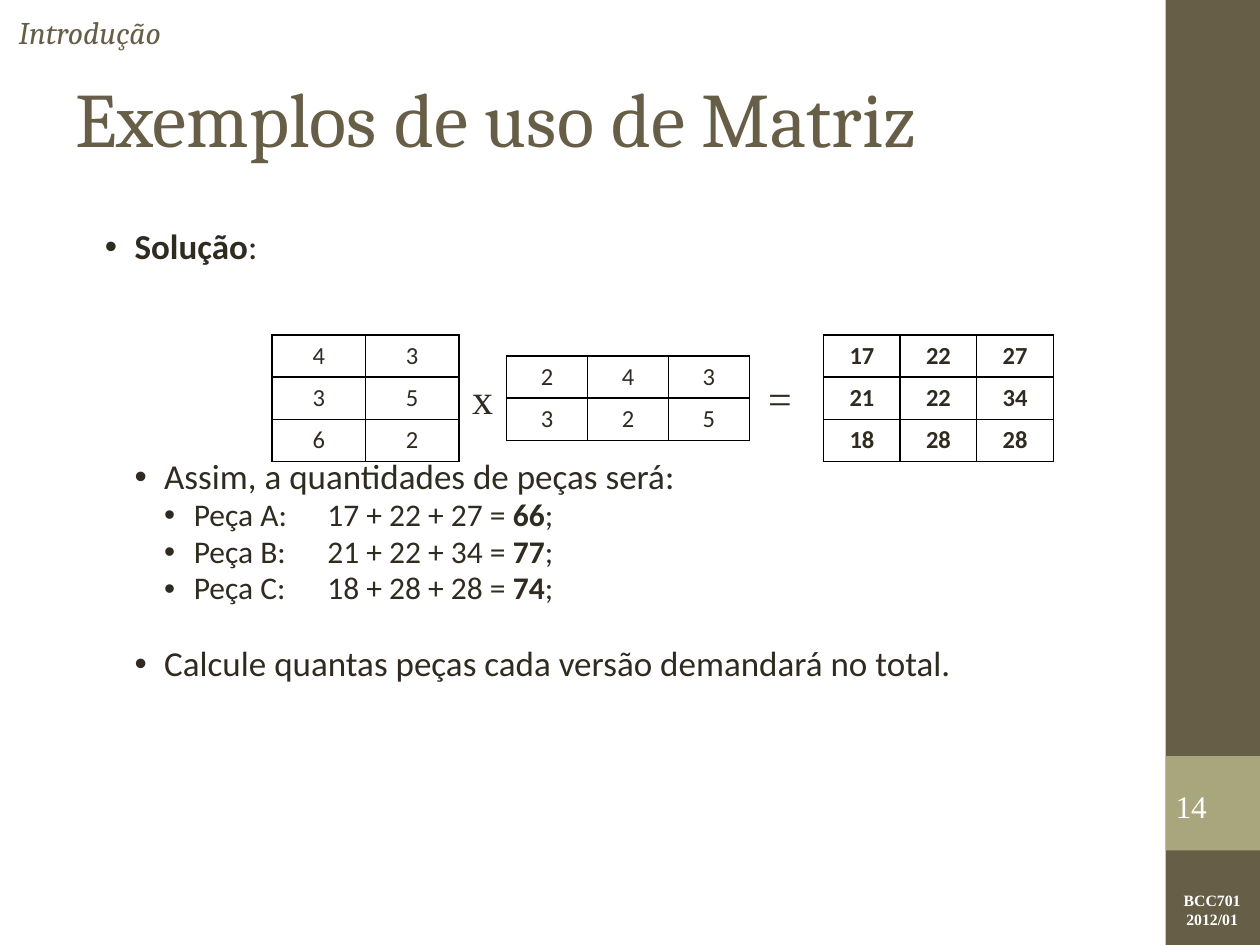
from pptx import Presentation
from pptx.dml.color import RGBColor
from pptx.enum.shapes import MSO_SHAPE as Shape
from pptx.enum.text import MSO_ANCHOR as Anchor, PP_ALIGN as Align
from pptx.oxml.ns import qn
from pptx.util import Inches, Pt
from lxml.etree import SubElement as Sub

COLS, ROWS = 100, 75
BROWN, SAGE, DARK, WHITE = "675E47", "A9A57C", "2F2B20", "FFFFFF"
SERIF, SANS, ROMAN = "Cambria", "Calibri", "Times New Roman"
INSET = (0.1, 0.05, 0.1, 0.05)
STEP = 0.235

deck = Presentation()
deck.slide_width, deck.slide_height = Inches(10), Inches(7.5)
slide = deck.slides.add_slide(deck.slide_layouts[6])


def color(code):
    return RGBColor.from_string(code)


def place(box):
    x, y, w, h = box
    wide, high = deck.slide_width / COLS, deck.slide_height / ROWS
    return [round(v) for v in (x * wide, y * high, w * wide, h * high)]


def style(font, form):
    for key, value in form.items():
        if key == "color":
            font.color.rgb = color(value)
        else:
            setattr(font, key, value)


def look(name, size, code, **more):
    return dict(name=name, size=Pt(size), color=code, **more)


def frame(box, anchor=Anchor.TOP, inset=INSET, wrap=True):
    text = slide.shapes.add_textbox(*place(box)).text_frame
    text.word_wrap, text.vertical_anchor = wrap, anchor
    for side, gap in zip(("left", "top", "right", "bottom"), inset):
        setattr(text, f"margin_{side}", Inches(gap))
    return text


def fill(para, words, form, align=Align.LEFT):
    para.alignment = align
    run = para.add_run()
    run.text = words
    style(run.font, form)


def label(box, words, form, **more):
    fill(frame(box, **more).paragraphs[0], words, form)


def panel(box, code):
    shape = slide.shapes.add_shape(Shape.RECTANGLE, *place(box))
    shape.shadow.inherit = False
    shape.fill.solid()
    shape.fill.fore_color.rgb = color(code)
    shape.line.fill.background()


def side(box):
    x, y, w, h = box
    panel(box, BROWN)
    panel((x, y + h * 0.8, w, h * 0.1), SAGE)
    label((x + 0.8, y + h * 0.824, w * 0.8, 4.3), "14",
          look(ROMAN, 18, WHITE), anchor=Anchor.MIDDLE, inset=(0,) * 4)
    text = frame((x + 0.1, y + h * 0.936, w - 0.3, 4))
    form = look(ROMAN, 9, WHITE, bold=True)
    fill(text.paragraphs[0], "BCC701", form, Align.CENTER)
    fill(text.add_paragraph(), "2012/01", form, Align.CENTER)


def head(box):
    x, y, w, h = box
    label((x - 4.5, y - 2.2, w, 3.4), "Introdução",
          look(SERIF, 18, BROWN, italic=True), anchor=Anchor.MIDDLE)
    label(box, "Exemplos de uso de Matriz", look(SERIF, 44, BROWN),
          anchor=Anchor.MIDDLE)


def bullet(para, level):
    props = para._p.get_or_add_pPr()
    props.set("marL", str(Inches(STEP * (level + 1))))
    props.set("indent", str(-Inches(STEP)))
    Sub(props, qn("a:buFont")).set("typeface", "Arial")
    Sub(props, qn("a:buChar")).set("char", "•")
    tabs = Sub(props, qn("a:tabLst"))
    Sub(tabs, qn("a:tab"), pos=str(Inches(2)), algn="l")


def body(box):
    parts = [("A", "17 + 22 + 27", "66"), ("B", "21 + 22 + 34", "77"),
             ("C", "18 + 28 + 28", "74")]
    items = [(1, 20, 0, ("", "Solução", ":")),
             (2, 20, 108, ("Assim, a quantidades de peças será:",))]
    items += [(3, 18, 0, (f"Peça {name}:\t{terms} = ", total, ";"))
              for name, terms, total in parts]
    items += [(2, 20, 21,
               ("Calcule quantas peças cada versão demandará no total.",))]
    text = frame(box)
    for n, (level, size, gap, runs) in enumerate(items):
        para = text.add_paragraph() if n else text.paragraphs[0]
        bullet(para, level)
        para.line_spacing = 0.97
        if gap:
            para.space_before = Pt(gap)
        for k, words in enumerate(runs):
            if words:
                fill(para, words, look(SANS, size, DARK, bold=k == 1))


def border(cell):
    props = cell._tc.get_or_add_tcPr()
    for n, edge in enumerate(("lnL", "lnR", "lnT", "lnB")):
        line = props.makeelement(qn(f"a:{edge}"), {"w": str(Pt(1))})
        paint = Sub(line, qn("a:solidFill"))
        Sub(paint, qn("a:srgbClr")).set("val", "000000")
        props.insert(n, line)


def matrix(box, rows, bold=False):
    high, wide = len(rows), len(rows[0])
    table = slide.shapes.add_table(high, wide, *place(box)).table
    table.first_row = table.horz_banding = False
    for r, row in enumerate(rows):
        for c, value in enumerate(row):
            cell = table.cell(r, c)
            cell.fill.background()
            cell.vertical_anchor = Anchor.MIDDLE
            border(cell)
            fill(cell.text_frame.paragraphs[0], str(value),
                 look(SANS, 14, DARK, bold=bold), Align.CENTER)


def product(box):
    x, y, w, h = box
    sign = look(ROMAN, 24, DARK)
    matrix((x, y, w * 0.239, h), [(4, 3), (3, 5), (6, 2)])
    label((x + w * 0.24, y + h / 4, 3.6, 5), "x", sign, wrap=False)
    matrix((x + w * 0.3, y + h / 6, w * 0.311, h * 2 / 3),
           [(2, 4, 3), (3, 2, 5)])
    label((x + w * 0.619, y + h / 4, 3.9, 5), "=", sign, wrap=False)
    matrix((x + w * 0.706, y, w * 0.294, h),
           [(17, 22, 27), (21, 22, 34), (18, 28, 28)], True)


side((92.5, 0, 7.5, ROWS))
head((5, 3, 83.3, 12.5))
body((5, 17.5, 83.3, 52.5))
product((21.6, 26.6, 62, 10))
deck.save("out.pptx")
